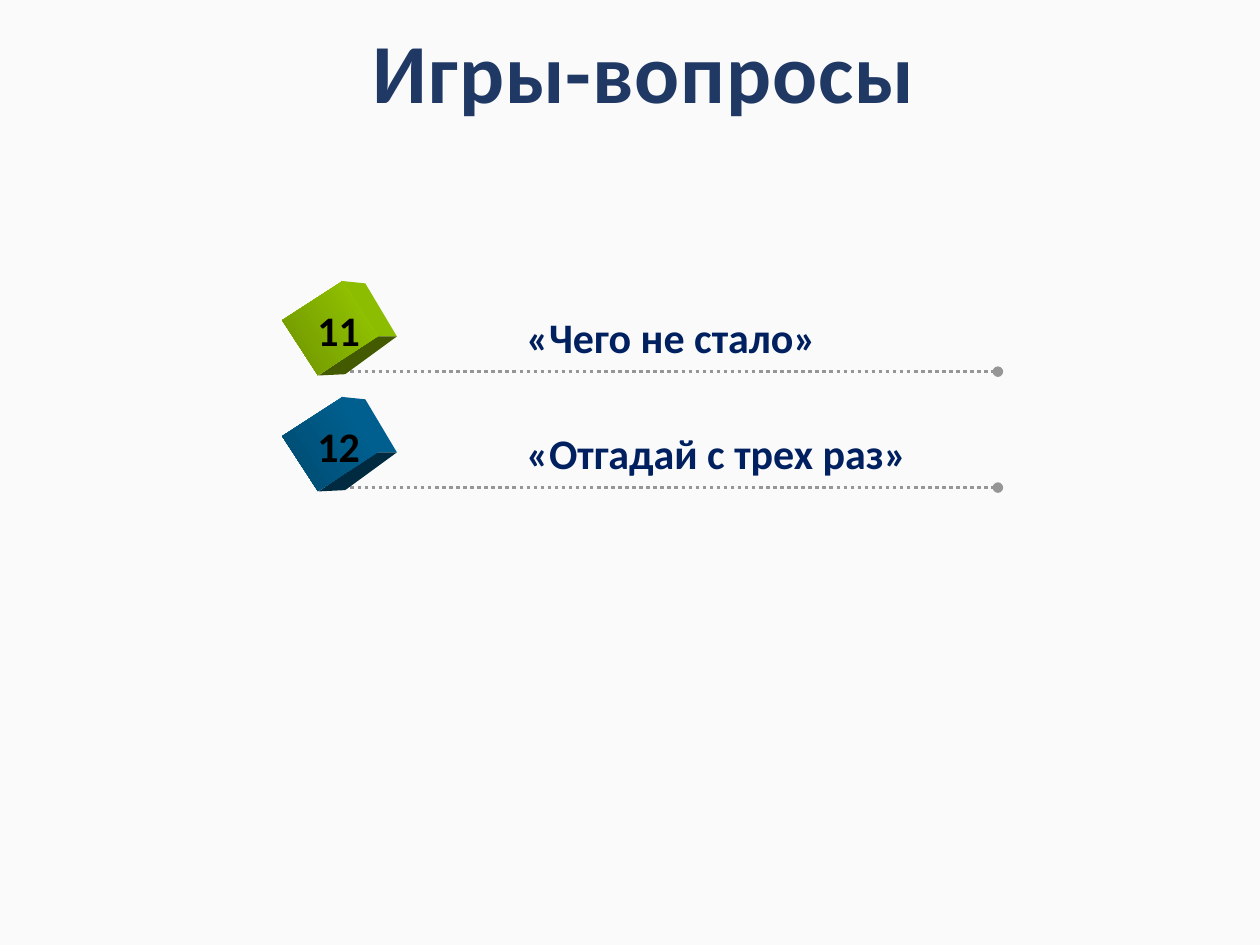
from lxml import etree
from pptx import Presentation
from pptx import util as u
from pptx.dml.color import RGBColor
from pptx.enum import dml, shapes, text
from pptx.oxml import ns

BACKGROUND = RGBColor(0xFA, 0xFA, 0xFA)
TITLE_BLUE = RGBColor(0x20, 0x38, 0x64)
LABEL_BLUE = RGBColor(0x00, 0x20, 0x60)
BLACK = RGBColor(0, 0, 0)
GREY = RGBColor(0x96, 0x96, 0x96)
GREEN_FACES = (RGBColor(0x99, 0xCC, 0x00), RGBColor(0x6D, 0x92, 0x00),
               RGBColor(0x8D, 0xBD, 0x00), RGBColor(0x44, 0x5A, 0x00))
BLUE_FACES = (RGBColor(0x00, 0x66, 0x99), RGBColor(0x00, 0x49, 0x6D),
              RGBColor(0x00, 0x5F, 0x8F), RGBColor(0x00, 0x2A, 0x40))
ROWS = [("11", "«Чего не стало»", 2.52, GREEN_FACES),
        ("12", "«Отгадай с трех раз»", 3.25, BLUE_FACES)]
ROW_LEFT, ROW_TOP, ROW_STEP = 2.36, 2.32, 0.92
SIDE_FACE = [(0.35, -0.09), (0.54, -0.07), (0.79, 0.35), (0.62, 0.35)]
BOTTOM_FACE = [(0.17, 0.66), (0.62, 0.35), (0.79, 0.35), (0.38, 0.65)]


def format_text(para, size, color):
    span = para.runs[0]
    span.font.name = "Calibri"
    span.font.size = u.Pt(size)
    span.font.bold = True
    span.font.color.rgb = color
    return span


def add_title(page, left, top, width, height):
    title = page.shapes.title
    title.left, title.top = u.Inches(left), u.Inches(top)
    title.width, title.height = u.Inches(width), u.Inches(height)
    frame = title.text_frame
    frame.text = "Игры-вопросы"
    frame.word_wrap = True
    frame.auto_size = text.MSO_AUTO_SIZE.NONE
    frame.vertical_anchor = text.MSO_ANCHOR.MIDDLE
    para = frame.paragraphs[0]
    para.alignment = text.PP_ALIGN.CENTER
    para.line_spacing = 0.9
    span = format_text(para, 48, TITLE_BLUE)
    span.font._element.set("spc", "50")


def add_dotted_line(group, left, top, width):
    line = group.shapes.add_connector(
        shapes.MSO_CONNECTOR.STRAIGHT, u.Inches(left), u.Inches(top),
        u.Inches(left + width), u.Inches(top))
    line.line.color.rgb = GREY
    line.line.width = u.Pt(2)
    line.line.dash_style = dml.MSO_LINE.ROUND_DOT
    properties = line._element.spPr
    outline = properties.find(ns.qn("a:ln"))
    etree.SubElement(outline, ns.qn("a:tailEnd"), type="oval")
    etree.SubElement(properties, ns.qn("a:effectLst"))


def add_cube(group, left, top, colors):
    light, dark, side, bottom = colors
    for points, color in ((SIDE_FACE, side), (BOTTOM_FACE, bottom)):
        corners = [(u.Inches(left + x), u.Inches(top + y)) for x, y in points]
        builder = group.shapes.build_freeform(*corners[0])
        builder.add_line_segments(corners[1:])
        face = builder.convert_to_shape()
        face.shadow.inherit = False
        face.fill.solid()
        face.fill.fore_color.rgb = color
        face.line.fill.background()
    front = group.shapes.add_shape(
        shapes.MSO_SHAPE.RECTANGLE, u.Inches(left), u.Inches(top),
        u.Inches(0.52), u.Inches(0.57))
    front.rotation = 57
    front.shadow.inherit = False
    front.line.fill.background()
    front.fill.gradient()
    front.fill.gradient_angle = 270
    for stop, color in zip(front.fill.gradient_stops, (light, dark)):
        stop.color.rgb = color


def add_label(group, left, top, width, words, color):
    box = group.shapes.add_textbox(
        u.Inches(left), u.Inches(top), u.Inches(width), u.Inches(0.51))
    frame = box.text_frame
    frame.text = words
    frame.word_wrap = False
    frame.auto_size = text.MSO_AUTO_SIZE.SHAPE_TO_FIT_TEXT
    format_text(frame.paragraphs[0], 24, color)


def add_row(page, left, top, number, label, label_width, colors):
    group = page.shapes.add_group_shape()
    add_dotted_line(group, left + 0.31, top + 0.63, 5.25)
    add_cube(group, left, top, colors)
    add_label(group, left + 1.72, top + 0.1, label_width, label, LABEL_BLUE)
    add_label(group, left + 0.06, top + 0.05, 0.54, number, BLACK)


def main():
    deck = Presentation()
    deck.slide_width, deck.slide_height = u.Inches(10), u.Inches(7.5)
    page = deck.slides.add_slide(deck.slide_layouts.get_by_name("Title Only"))
    page.background.fill.solid()
    page.background.fill.fore_color.rgb = BACKGROUND
    add_title(page, 2.43, 0.17, 5.36, 0.87)
    for index, row in enumerate(ROWS):
        add_row(page, ROW_LEFT, ROW_TOP + index * ROW_STEP, *row)
    deck.save("out.pptx")


if __name__ == "__main__":
    main()
